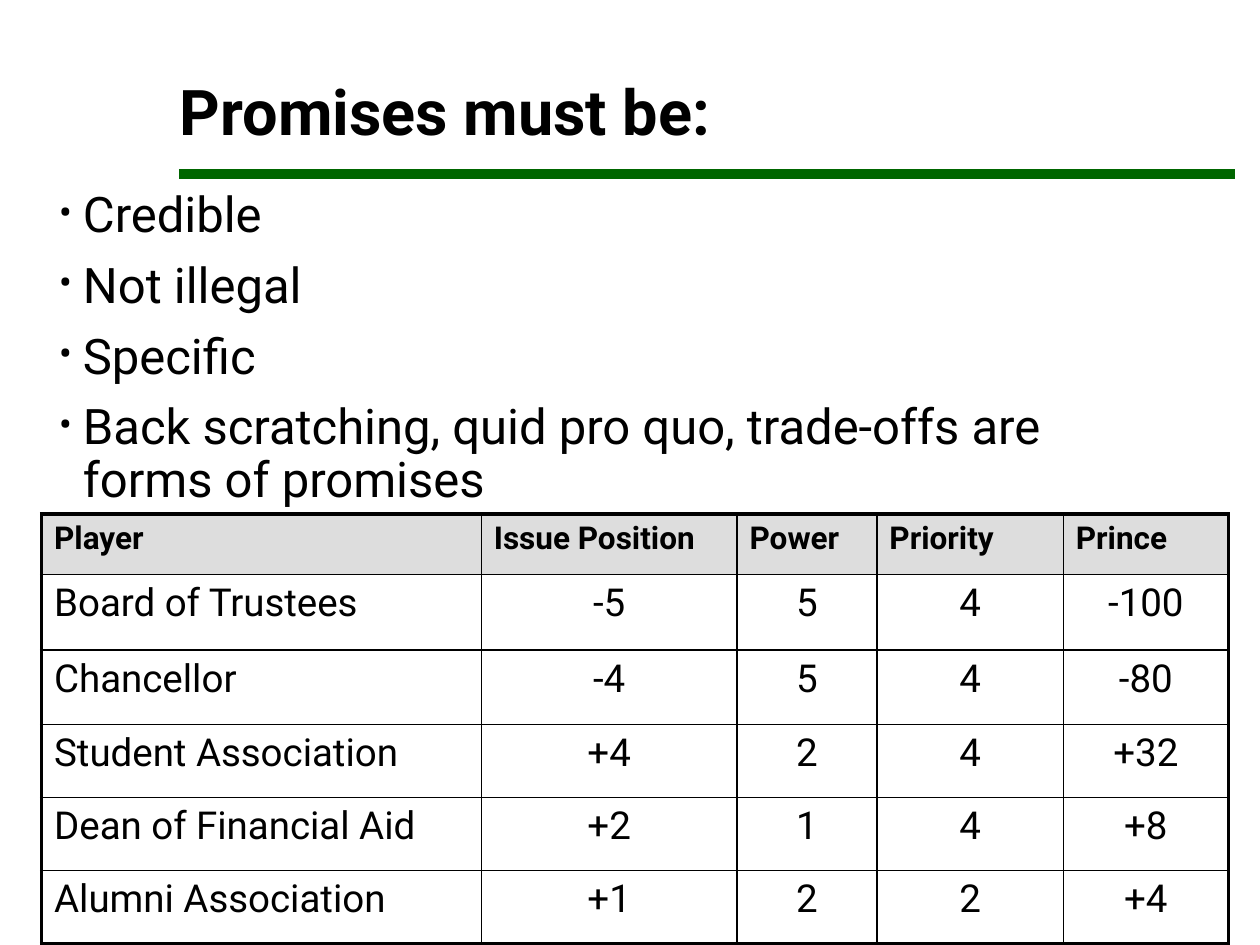
from lxml import etree
from pptx import Presentation
from pptx.dml.color import RGBColor
from pptx.enum import shapes, text
from pptx.oxml import ns
from pptx.util import Inches, Pt


def color(value):
    return RGBColor.from_string(value)


def add_element(parent, tag, **attributes):
    element = etree.SubElement(parent, ns.qn(tag))
    for name, value in attributes.items():
        element.set(name, str(value))
    return element


presentation = Presentation()
presentation.slide_width = Inches(10)
presentation.slide_height = Inches(7.5)
slide = presentation.slides.add_slide(presentation.slide_layouts[6])

rule = slide.shapes.add_connector(
    shapes.MSO_CONNECTOR.STRAIGHT, Inches(1.42), Inches(1.38), Inches(9.8), Inches(1.38)
)
rule.line.color.rgb = color("006600")
rule.line.width = Pt(6)
add_element(rule._element.spPr, "a:effectLst")

body_font = {"name": "Roboto", "size": Pt(28), "bold": False}
title_font = {"name": "Roboto", "size": Pt(36), "bold": True}
promises = [
    "Credible",
    "Not illegal",
    "Specific",
    "Back scratching, quid pro quo, trade-offs are forms of promises",
]
boxes = [
    ((1.33, 0.58, 8.5, 0.65), ["Promises must be:"], title_font, 0.9, text.MSO_ANCHOR.BOTTOM, False),
    ((0.33, 1.5, 8.92, 2.73), promises, body_font, 0.8, text.MSO_ANCHOR.TOP, True),
]
for position, lines, font_format, spacing, anchor, bulleted in boxes:
    frame = slide.shapes.add_textbox(*map(Inches, position)).text_frame
    frame.word_wrap = True
    frame.vertical_anchor = anchor
    for index, line in enumerate(lines):
        paragraph = frame.paragraphs[0] if index == 0 else frame.add_paragraph()
        paragraph.text = line
        paragraph.line_spacing = spacing
        paragraph.space_before = Pt(13.5 if index else 0)
        if bulleted:
            properties = paragraph._p.get_or_add_pPr()
            properties.set("marL", str(Inches(0.23)))
            properties.set("indent", str(Inches(-0.19)))
            add_element(add_element(properties, "a:buClr"), "a:srgbClr", val="000000")
            add_element(properties, "a:buSzPct", val=80000)
            add_element(properties, "a:buFont", typeface="Roboto")
            add_element(properties, "a:buChar", char="•")
        for name, value in font_format.items():
            setattr(paragraph.font, name, value)
        paragraph.font.color.rgb = color("000000")
closing_space = paragraph.add_run()
closing_space.text = " "
closing_space.font.size = Pt(32)

rows = [
    ["Player", "Issue Position", "Power", "Priority", "Prince"],
    ["Board of Trustees", "-5", "5", "4", "-100"],
    ["Chancellor", "-4", "5", "4", "-80"],
    ["Student Association", "+4", "2", "4", "+32"],
    ["Dean of Financial Aid", "+2", "1", "4", "+8"],
    ["Alumni Association", "+1", "2", "2", "+4"],
]
column_widths = [3.49, 2.03, 1.11, 1.48, 1.31]
row_heights = [0.48, 0.6, 0.59, 0.58, 0.58, 0.58]
table = slide.shapes.add_table(
    len(rows), len(column_widths), Inches(0.33), Inches(4.08), Inches(9.42), Inches(3.42)
).table
for column, width in zip(table.columns, column_widths):
    column.width = Inches(width)
for row, height in zip(table.rows, row_heights):
    row.height = Inches(height)

header_font = {"name": "Roboto", "size": Pt(18), "bold": True}
cell_font = {"name": "Roboto", "size": Pt(22), "bold": False}
last_row, last_column = len(rows) - 1, len(column_widths) - 1
for row_index, values in enumerate(rows):
    for column_index, value in enumerate(values):
        cell = table.cell(row_index, column_index)
        outer_edges = {
            "a:lnL": column_index == 0,
            "a:lnR": column_index == last_column,
            "a:lnT": row_index == 0,
            "a:lnB": row_index == last_row,
        }
        cell_properties = cell._tc.get_or_add_tcPr()
        for tag, is_outer in outer_edges.items():
            border = add_element(cell_properties, tag, w=Pt(2.25 if is_outer else 1))
            add_element(add_element(border, "a:solidFill"), "a:srgbClr", val="000000")
        if row_index == 0:
            cell.fill.solid()
            cell.fill.fore_color.rgb = color("DDDDDD")
        else:
            cell.fill.background()
        cell.text = value
        paragraph = cell.text_frame.paragraphs[0]
        if row_index and column_index:
            paragraph.alignment = text.PP_ALIGN.CENTER
        for name, setting in (cell_font if row_index else header_font).items():
            setattr(paragraph.font, name, setting)
        paragraph.font.color.rgb = color("000000")

presentation.save("out.pptx")
